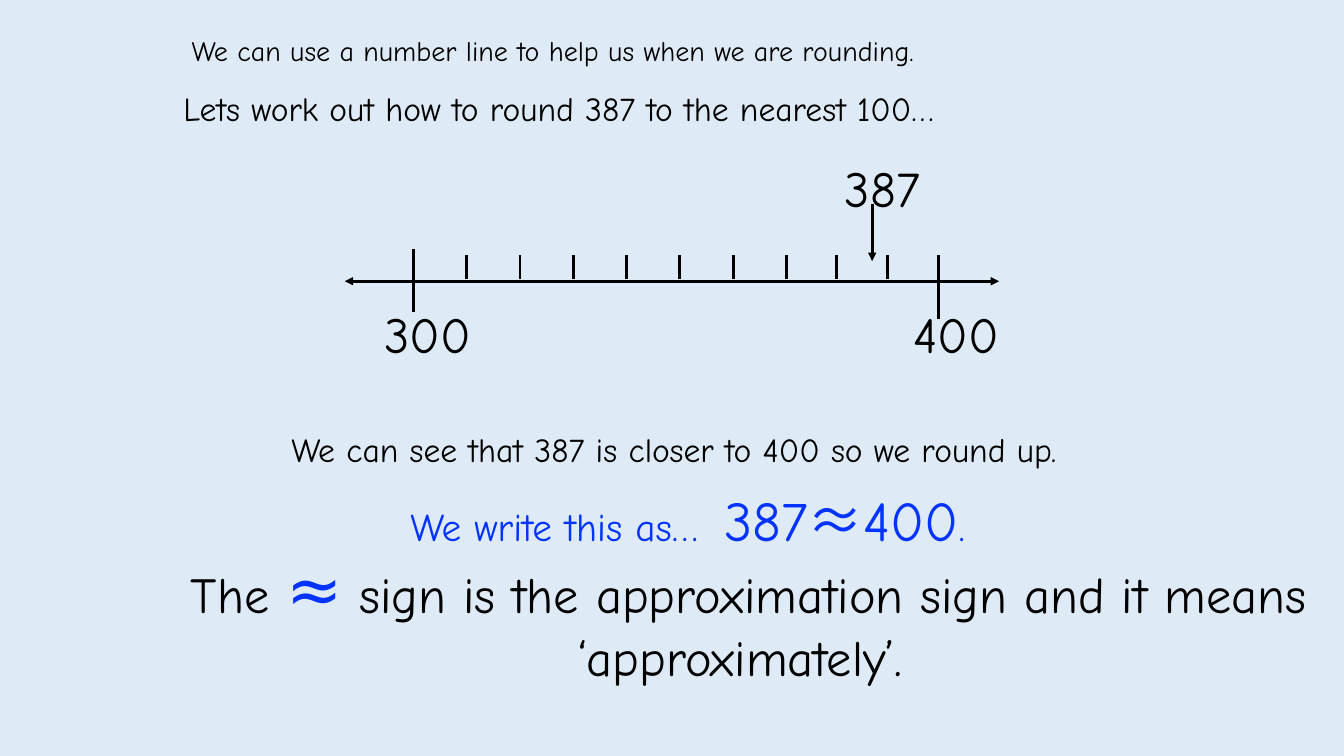
from dataclasses import dataclass

from lxml import etree
from pptx import Presentation
from pptx.dml.color import RGBColor
from pptx.enum import shapes, text
from pptx.oxml import ns
from pptx.util import Inches, Pt

BLACK, BLUE, PALE_BLUE = "000000", "0433FF", "DEEBF7"
COMIC, SYMBOL = "Comic Neue", "Noto Sans CJK JP"


@dataclass
class Run:
    text: str
    size: float
    color: str = BLACK
    font: str = COMIC


@dataclass
class Label:
    left: float
    top: float
    width: float
    height: float
    runs: list[Run]
    align: text.PP_ALIGN = text.PP_ALIGN.LEFT


@dataclass
class Line:
    x1: float
    y1: float
    x2: float
    y2: float
    arrow: bool = False


def rgb(color: str) -> RGBColor:
    return RGBColor.from_string(color)


def draw_line(s, line: Line) -> None:
    c = s.shapes.add_connector(
        shapes.MSO_CONNECTOR.STRAIGHT,
        Inches(line.x1), Inches(line.y1), Inches(line.x2), Inches(line.y2))
    c.line.color.rgb = rgb(BLACK)
    c.line.width = Pt(2)
    if line.arrow:
        etree.SubElement(c.line._get_or_add_ln(), ns.qn("a:tailEnd"), type="triangle")
    etree.SubElement(c._element.spPr, ns.qn("a:effectLst"))


def draw_label(s, label: Label) -> None:
    sp = s.shapes.add_textbox(
        Inches(label.left), Inches(label.top), Inches(label.width), Inches(label.height))
    tf = sp.text_frame
    tf.word_wrap = True
    tf.vertical_anchor = text.MSO_ANCHOR.MIDDLE
    tf.margin_left = tf.margin_right = tf.margin_top = tf.margin_bottom = Inches(0.04)
    p = tf.paragraphs[0]
    p.alignment = label.align
    for run in label.runs:
        r = p.add_run()
        r.text = run.text
        r.font.name = run.font
        r.font.size = Pt(run.size)
        r.font.color.rgb = rgb(run.color)


AXIS_Y = 2.79
TICK_TOP, TICK_BOTTOM = 2.53, 2.77
FIRST_TICK, SEVENTH_TICK = 4.63, 7.8
TICK_XS = [FIRST_TICK + i * (SEVENTH_TICK - FIRST_TICK) / 6 for i in range(7)] + [8.3, 8.8]

LINES = [
    Line(4.04, AXIS_Y, 9.91, AXIS_Y, arrow=True),
    Line(4.14, AXIS_Y, 3.42, AXIS_Y, arrow=True),
    Line(4.1, 3.1, 4.1, 2.47),
    *[Line(x, TICK_BOTTOM, x, TICK_TOP) for x in TICK_XS],
    Line(9.31, 3.16, 9.31, TICK_TOP),
    Line(8.65, 2.02, 8.65, 2.59, arrow=True),
]

LABELS = [
    Label(1.86, 0.29, 7.69, 0.42,
          [Run("We can use a number line to help us when we are rounding.", 20)]),
    Label(1.78, 0.83, 8.33, 0.48,
          [Run("Lets work out how to round 387 to the nearest 100…", 24)]),
    Label(3.77, 2.97, 1, 0.68, [Run("300", 36)]),
    Label(9.02, 2.97, 1, 0.68, [Run("400", 36)]),
    Label(8.34, 1.52, 1, 0.68, [Run("387", 36)]),
    Label(2.85, 4.21, 8.51, 0.48,
          [Run("We can see that 387 is closer to 400 so we round up.", 24)]),
    Label(4.03, 4.77, 6.15, 0.75, [
        Run("We write this as…  ", 28, BLUE),
        Run("387", 40, BLUE),
        Run("≈", 40, BLUE, SYMBOL),
        Run("400", 40, BLUE),
        Run(".", 28, BLUE),
    ]),
    Label(0.61, 5.37, 13.63, 1.49, [
        Run("The ", 36),
        Run("≈", 48, BLUE),
        Run(" sign is the approximation sign and it means ‘approximately’. ", 36),
    ], text.PP_ALIGN.CENTER),
]


def main() -> None:
    prs = Presentation()
    prs.slide_width, prs.slide_height = Inches(13.33), Inches(7.5)
    s = prs.slides.add_slide(prs.slide_layouts[6])
    s.background.fill.solid()
    s.background.fill.fore_color.rgb = rgb(PALE_BLUE)
    for line in LINES:
        draw_line(s, line)
    for label in LABELS:
        draw_label(s, label)
    prs.save("out.pptx")


if __name__ == "__main__":
    main()
